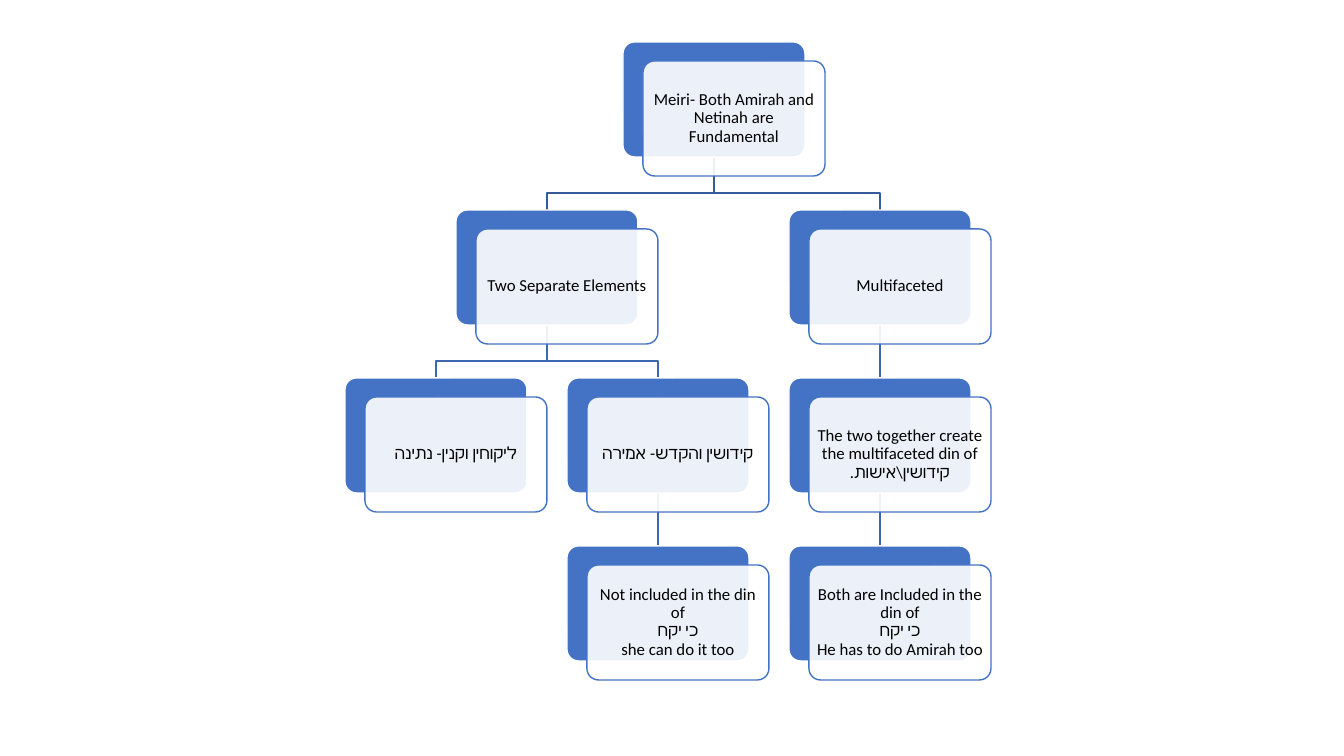
from lxml import etree
from pptx import Presentation
from pptx import util as u
from pptx.dml.color import RGBColor
from pptx.enum import shapes, text
from pptx.oxml.ns import qn

PX = 914400 / 100.8
THEME = {
    "blue": "4472C4", "white": "FFFFFF", "ink": "000000",
    "trunk": "365B9D", "twig": "3E67B2",
    "font": "Calibri", "size": 12, "line": 1,
}
LEFT, TOP, COL, ROW = 345, 42, 222, 168
WIDE, HIGH = 182, 115
SHIFT_X, SHIFT_Y = 20, 19
BEND = 17

# key: column, row, parent, wording
NODES = {
    "root": (1.25, 0, None, "Meiri- Both Amirah and Netinah are Fundamental"),
    "two": (0.5, 1, "root", "Two Separate Elements"),
    "money": (0, 2, "two", "ליקוחין וקנין- נתינה"),
    "holy": (1, 2, "two", "קידושין והקדש- אמירה"),
    "she": (1, 3, "holy", "Not included in the din of\vכי יקח\vshe can do it too"),
    "multi": (2, 1, "root", "Multifaceted"),
    "both": (2, 2, "multi", "The two together create the multifaceted din of קידושין\\אישות."),
    "he": (2, 3, "both", "Both are Included in the din of\vכי יקח\vHe has to do Amirah too"),
}


def px(*vals):
    return [u.Emu(round(v * PX)) for v in vals]


def card(x, y, fill, line):
    """Add one rounded panel with its top left corner at x, y."""
    box = slide.shapes.add_shape(
        shapes.MSO_SHAPE.ROUNDED_RECTANGLE, *px(x, y, WIDE, HIGH))
    box.adjustments[0] = 0.1
    box.shadow.inherit = False
    box.fill.solid()
    box.fill.fore_color.rgb = RGBColor.from_string(THEME[fill])
    box.line.color.rgb = RGBColor.from_string(THEME[line])
    box.line.width = u.Pt(THEME["line"])
    return box


deck = Presentation()
deck.slide_width, deck.slide_height = px(1344, 756)
slide = deck.slides.add_slide(deck.slide_layouts[6])

spots = {key: (LEFT + round(COL * col), TOP + ROW * row)
         for key, (col, row, _, _) in NODES.items()}

# Branches lie behind the cards
for key, (_, row, boss, _) in reversed(NODES.items()):
    if boss is None:
        continue
    x1, y1 = spots[boss][0] + WIDE // 2, spots[boss][1] + HIGH
    x2, y2 = spots[key][0] + WIDE // 2, spots[key][1]
    if x1 == x2:
        link = slide.shapes.add_connector(
            shapes.MSO_CONNECTOR.STRAIGHT, *px(x1, y1, x2, y2))
        etree.SubElement(link._element.spPr, qn("a:effectLst"))
    else:
        pen = slide.shapes.build_freeform(*px(x1, y1))
        turns = [(x1, y2 - BEND), (x2, y2 - BEND), (x2, y2)]
        pen.add_line_segments([px(*spot) for spot in turns], close=False)
        link = pen.convert_to_shape()
        link.fill.background()
        link.shadow.inherit = False
    tone = "trunk" if row == 1 else "twig"
    link.line.color.rgb = RGBColor.from_string(THEME[tone])
    link.line.width = u.Pt(THEME["line"])

inset = px(4)[0]
frame_set = {
    "word_wrap": True, "vertical_anchor": text.MSO_ANCHOR.MIDDLE,
    "margin_left": inset, "margin_right": inset,
    "margin_top": inset, "margin_bottom": inset,
}
font_set = {"size": u.Pt(THEME["size"]), "name": THEME["font"]}

for key, (_, _, _, words) in NODES.items():
    x, y = spots[key]
    card(x, y, "blue", "white")
    front = card(x + SHIFT_X, y + SHIFT_Y, "white", "blue")
    tint = front._element.spPr.find(qn("a:solidFill"))[0]
    etree.SubElement(tint, qn("a:alpha"), val="90000")

    frame = front.text_frame
    for name, val in frame_set.items():
        setattr(frame, name, val)
    para = frame.paragraphs[0]
    para.text = words
    para.alignment = text.PP_ALIGN.CENTER
    para.line_spacing = 0.9
    para._p.get_or_add_pPr().set("rtl", "1")
    for run in para.runs:
        run.font.color.rgb = RGBColor.from_string(THEME["ink"])
        for name, val in font_set.items():
            setattr(run.font, name, val)
        etree.SubElement(run._r.rPr, qn("a:cs"), typeface=THEME["font"])

deck.save("out.pptx")
